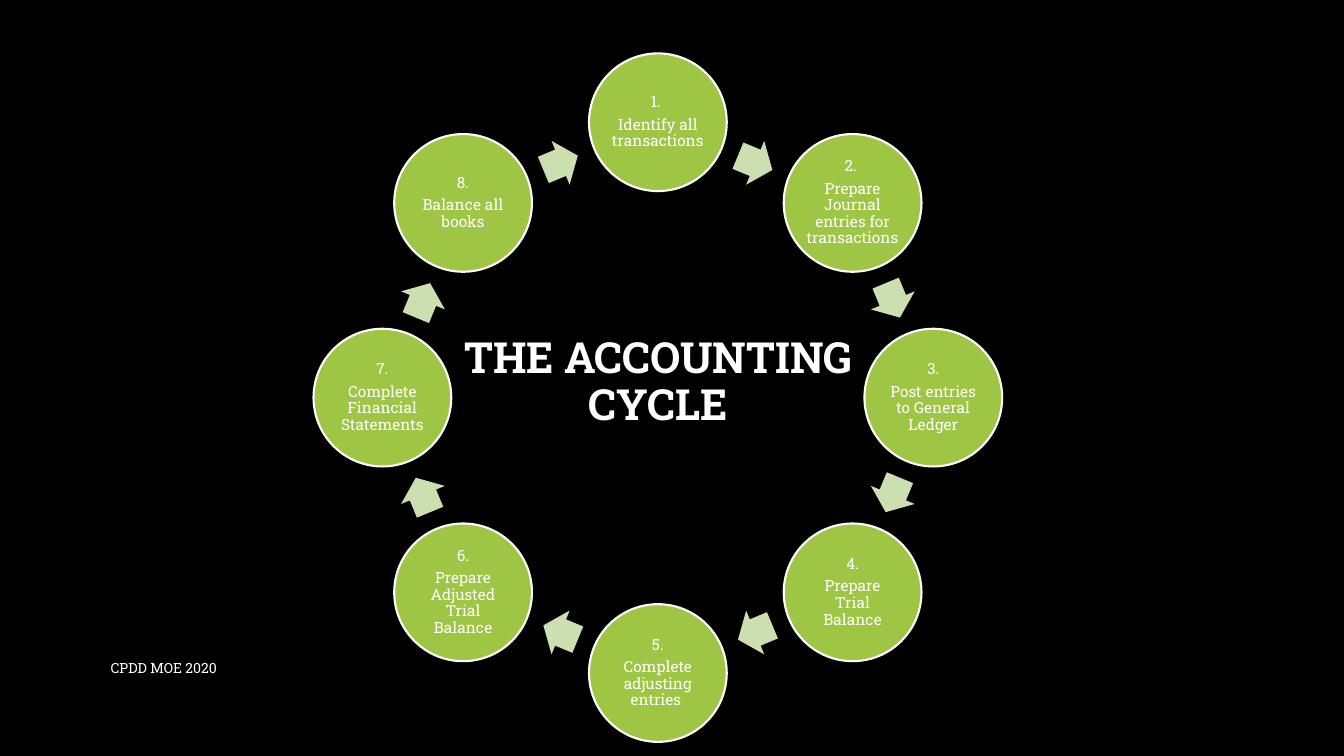
from math import cos, radians, sin

from pptx import Presentation
from pptx.dml.color import RGBColor
from pptx.enum.shapes import MSO_SHAPE as Shape
from pptx.enum.text import MSO_ANCHOR as Anchor, MSO_AUTO_SIZE as AutoSize, PP_ALIGN as Align
from pptx.util import Inches, Pt

FONT = "Roboto Slab"
WHITE, BLACK, GREEN, PALE_GREEN = "FFFFFF", "000000", "9EC544", "CCDFB0"
STEPS = [
    ("1. ", "Identify all transactions"),
    ("2. ", "Prepare Journal entries for transactions"),
    ("3.", "Post entries to General Ledger"),
    ("4.", "Prepare Trial Balance"),
    ("5.", "Complete adjusting entries "),
    ("6.", "Prepare Adjusted Trial Balance"),
    ("7.", "Complete Financial Statements"),
    ("8.", "Balance all books"),
]


def paint(fill, color):
    fill.solid()
    fill.fore_color.rgb = RGBColor.from_string(color)


def add_run(para, text, size, bold=False):
    run = para.add_run()
    run.text = text
    run.font.name, run.font.size, run.font.bold = FONT, Pt(size), bold
    paint(run.font.fill, WHITE)


def prepare_frame(box, margin=None):
    """Wrap and centre the text vertically, with equal margins if one is given."""
    frame = box.text_frame
    frame.word_wrap = True
    frame.auto_size = AutoSize.NONE
    frame.vertical_anchor = Anchor.MIDDLE
    if margin is not None:
        frame.margin_left = frame.margin_right = Inches(margin)
        frame.margin_top = frame.margin_bottom = Inches(margin)
    return frame


def add_centred(page, kind, x, y, width, height, color):
    """Add a filled preset shape whose centre is at x, y."""
    shape = page.shapes.add_shape(kind, Inches(x - width / 2), Inches(y - height / 2),
                                  Inches(width), Inches(height))
    shape.shadow.inherit = False
    paint(shape.fill, color)
    return shape


def add_step(page, x, y, diameter, texts):
    circle = add_centred(page, Shape.OVAL, x, y, diameter, diameter, GREEN)
    paint(circle.line.fill, WHITE)
    circle.line.width = Pt(1.5)
    frame = prepare_frame(circle, 0.02)
    for index, text in enumerate(texts):
        para = frame.add_paragraph() if index else frame.paragraphs[0]
        para.alignment = Align.CENTER
        para.line_spacing = 0.9
        para.space_after = Pt(4)
        add_run(para, text, 11)


def add_arrow(page, x, y, rotation):
    arrow = add_centred(page, Shape.RIGHT_ARROW, x, y, 0.37, 0.47, PALE_GREEN)
    arrow.line.fill.background()
    arrow.adjustments[0], arrow.adjustments[1] = 0.6, 0.5
    arrow.rotation = rotation


def add_cycle(page, left, top, size):
    """Place the steps clockwise from the top of a square, with arrows between them."""
    diameter = size * 0.2
    ring = (size - diameter) / 2
    arrow_ring = ring * 0.923
    middle_x, middle_y = left + size / 2, top + size / 2
    turn = 360 / len(STEPS)

    def point(angle, radius):
        return (middle_x + radius * sin(radians(angle)),
                middle_y - radius * cos(radians(angle)))

    for index, texts in enumerate(STEPS):
        angle = index * turn
        add_step(page, *point(angle, ring), diameter, texts)
        between = angle + turn / 2
        add_arrow(page, *point(between, arrow_ring), between)


def set_title(page, left, top, width, height):
    title = page.shapes.title
    title.left, title.top = Inches(left), Inches(top)
    title.width, title.height = Inches(width), Inches(height)
    para = prepare_frame(title).paragraphs[0]
    para.alignment = Align.CENTER
    para.line_spacing = 0.9
    add_run(para, "THE ACCOUNTING CYCLE", 30.6, bold=True)


def add_credit(page, left, top, width, height):
    box = page.shapes.add_textbox(Inches(left), Inches(top), Inches(width), Inches(height))
    add_run(prepare_frame(box).paragraphs[0], "CPDD MOE 2020", 10)


def main():
    deck = Presentation()
    deck.slide_width, deck.slide_height = Inches(13.33), Inches(7.5)
    page = deck.slides.add_slide(deck.slide_layouts[5])
    paint(page.background.fill, BLACK)
    set_title(page, 4.45, 3.53, 4.16, 0.54)
    add_credit(page, 1, 6.43, 7.3, 0.4)
    add_cycle(page, 3.11, 0.53, 6.83)
    deck.save("out.pptx")


if __name__ == "__main__":
    main()
